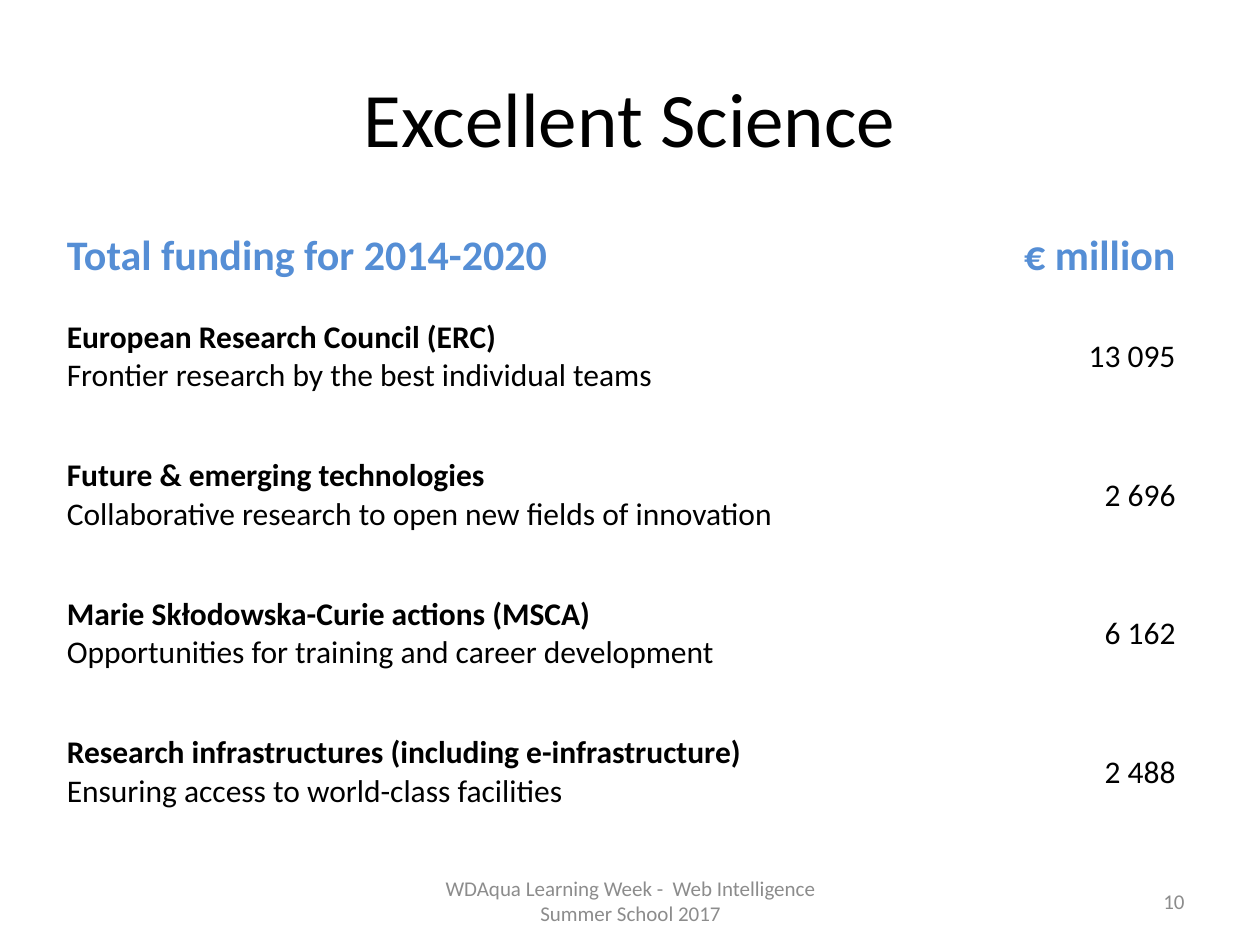
"""Build the Excellent Science funding slide."""
from pptx import Presentation
from pptx import util as u
from pptx.dml.color import RGBColor
from pptx.enum import text

BLACK = RGBColor(0x00, 0x00, 0x00)
BLUE = RGBColor(0x55, 0x8E, 0xD5)
GREY = RGBColor(0x8C, 0x8C, 0x8C)
LEFT, CENTER, RIGHT = text.PP_ALIGN.LEFT, text.PP_ALIGN.CENTER, text.PP_ALIGN.RIGHT


def write(frame, content, size=18, color=BLACK, align=LEFT, bold_lines=0):
    frame.word_wrap = True
    paragraph = frame.paragraphs[0]
    paragraph.alignment = align
    for index, line in enumerate(content.split("\n")):
        if index:
            paragraph.add_line_break()
        run = paragraph.add_run()
        run.text = line
        run.font.name = "Calibri"
        run.font.size = u.Pt(size)
        run.font.bold = index < bold_lines
        run.font.color.rgb = color


presentation = Presentation()
presentation.slide_width = u.Inches(10)
presentation.slide_height = u.Inches(7.5)
slide = presentation.slides.add_slide(presentation.slide_layouts[6])

text_boxes = [
    ("Excellent Science", (0.5, 0.3, 9, 1.25), 44, BLACK, CENTER),
    ("10", (7.17, 6.95, 2.33, 0.4), 12, GREY, RIGHT),
    ("WDAqua Learning Week -  Web Intelligence Summer School 2017",
     (3.42, 6.95, 3.17, 0.4), 12, GREY, CENTER),
]
for content, box, size, color, align in text_boxes:
    shape = slide.shapes.add_textbox(*map(u.Inches, box))
    shape.text_frame.vertical_anchor = text.MSO_ANCHOR.MIDDLE
    write(shape.text_frame, content, size=size, color=color, align=align)

funding = [
    ("Total funding for 2014-2020", "€ million"),
    ("European Research Council (ERC)\n"
     "Frontier research by the best individual teams", "13 095"),
    ("Future & emerging technologies\n"
     "Collaborative research to open new fields of innovation", "2 696"),
    ("Marie Skłodowska-Curie actions (MSCA)\n"
     "Opportunities for training and career development", "6 162"),
    ("Research infrastructures (including e-infrastructure)\n"
     "Ensuring access to world-class facilities", "2 488"),
]
table = slide.shapes.add_table(
    len(funding), 2, u.Inches(0.43), u.Inches(1.78), u.Inches(9), u.Inches(4.87)).table
table.horz_banding = False
table.first_row = False
table.columns[0].width = u.Inches(5.98)
table.columns[1].width = u.Inches(3.02)

for row, entries in enumerate(funding):
    header = row == 0
    table.rows[row].height = u.Inches(0.47 if header else 1.1)
    for column, content in enumerate(entries):
        cell = table.cell(row, column)
        cell.fill.background()
        cell.vertical_anchor = text.MSO_ANCHOR.MIDDLE
        write(cell.text_frame, content,
              size=24 if header else 18,
              color=BLUE if header else BLACK,
              align=RIGHT if column else LEFT,
              bold_lines=1 if header or column == 0 else 0)

presentation.save("out.pptx")
